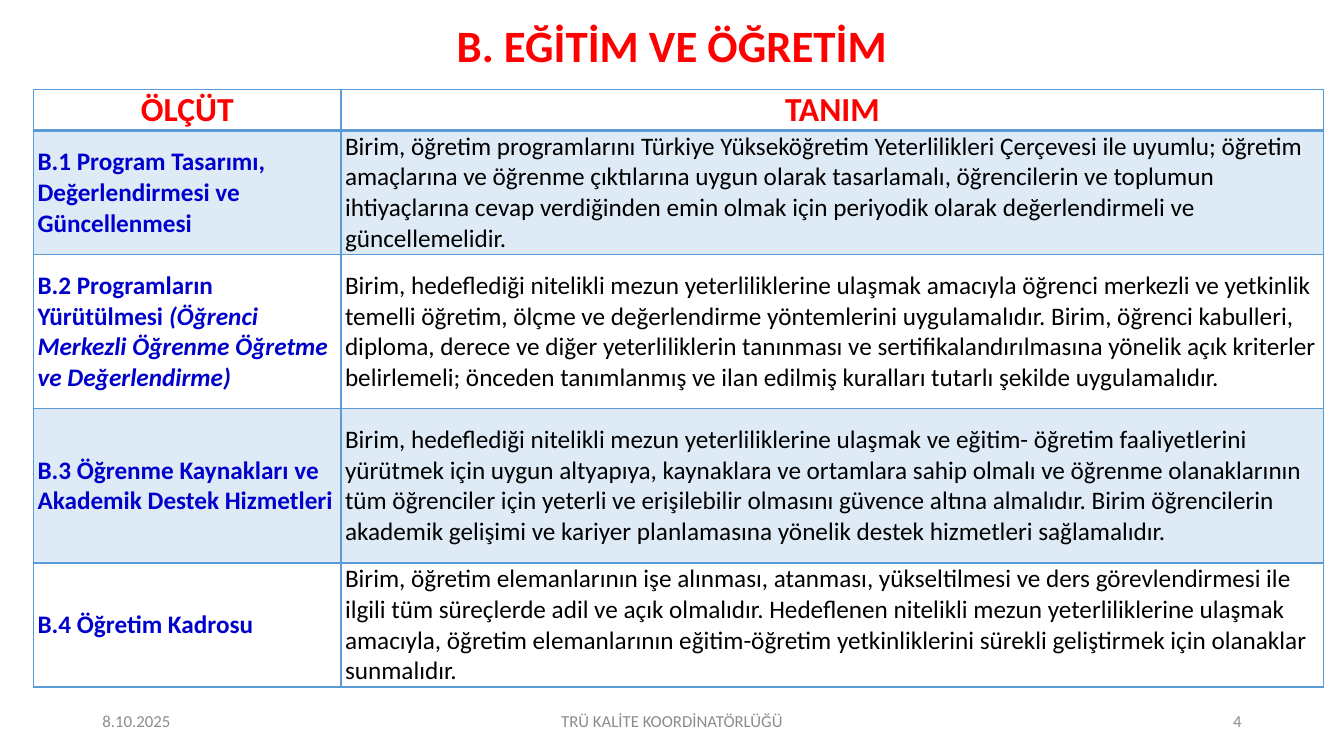
from lxml import etree
from pptx import Presentation
from pptx import util as u
from pptx.dml import color
from pptx.enum import text
from pptx.oxml import ns

COLORS = {"heading": "FF0000", "criterion": "0000CC", "body": "000000",
          "accent": "5B9BD5", "footer": "8C8C8C"}
LEFT, CENTER, RIGHT = text.PP_ALIGN.LEFT, text.PP_ALIGN.CENTER, text.PP_ALIGN.RIGHT

CRITERIA = [
    (["B.1 Program Tasarımı, Değerlendirmesi ve Güncellenmesi"],
     "Birim, öğretim programlarını Türkiye Yükseköğretim Yeterlilikleri Çerçevesi ile uyumlu; "
     "öğretim amaçlarına ve öğrenme çıktılarına uygun olarak tasarlamalı, öğrencilerin ve toplumun "
     "ihtiyaçlarına cevap verdiğinden emin olmak için periyodik olarak değerlendirmeli ve "
     "güncellemelidir."),
    (["B.2 Programların Yürütülmesi ", "(Öğrenci Merkezli Öğrenme Öğretme ve Değerlendirme)"],
     "Birim, hedeflediği nitelikli mezun yeterliliklerine ulaşmak amacıyla öğrenci merkezli ve "
     "yetkinlik temelli öğretim, ölçme ve değerlendirme yöntemlerini uygulamalıdır. Birim, öğrenci "
     "kabulleri, diploma, derece ve diğer yeterliliklerin tanınması ve sertifikalandırılmasına "
     "yönelik açık kriterler belirlemeli; önceden tanımlanmış ve ilan edilmiş kuralları tutarlı "
     "şekilde uygulamalıdır."),
    (["B.3 Öğrenme Kaynakları ve Akademik Destek Hizmetleri"],
     "Birim, hedeflediği nitelikli mezun yeterliliklerine ulaşmak ve eğitim- öğretim faaliyetlerini "
     "yürütmek için uygun altyapıya, kaynaklara ve ortamlara sahip olmalı ve öğrenme olanaklarının "
     "tüm öğrenciler için yeterli ve erişilebilir olmasını güvence altına almalıdır. Birim "
     "öğrencilerin akademik gelişimi ve kariyer planlamasına yönelik destek hizmetleri sağlamalıdır."),
    (["B.4 Öğretim Kadrosu"],
     "Birim, öğretim elemanlarının işe alınması, atanması, yükseltilmesi ve ders görevlendirmesi ile "
     "ilgili tüm süreçlerde adil ve açık olmalıdır. Hedeflenen nitelikli mezun yeterliliklerine "
     "ulaşmak amacıyla, öğretim elemanlarının eğitim-öğretim yetkinliklerini sürekli geliştirmek "
     "için olanaklar sunmalıdır."),
]


class PageBuilder:
    font = "Calibri"
    columns, rows = 40, 50

    def __init__(self, deck):
        self.page = deck.slides.add_slide(deck.slide_layouts[5])
        self.column = deck.slide_width / self.columns
        self.row = deck.slide_height / self.rows

    def across(self, count):
        return u.Emu(round(count * self.column))

    def down(self, count):
        return u.Emu(round(count * self.row))

    def frame(self, left, top, width, height):
        return self.across(left), self.down(top), self.across(width), self.down(height)

    def fill_para(self, para, spans, size, shade, align=LEFT, bold=False):
        para.alignment = align
        for index, words in enumerate(spans):
            span = para.add_run()
            span.text = words
            if index:
                span.font.italic = True
        para.font.name = self.font
        para.font.size = u.Pt(size)
        para.font.bold = bold
        para.font.color.rgb = color.RGBColor.from_string(COLORS[shade])

    def title(self, words, *place):
        box = self.page.shapes.title
        box.left, box.top, box.width, box.height = self.frame(*place)
        box.text_frame.vertical_anchor = text.MSO_ANCHOR.MIDDLE
        para = box.text_frame.paragraphs[0]
        para.line_spacing = 0.9
        self.fill_para(para, [words], 32, "heading", CENTER, True)

    def label(self, words, align, *place):
        box = self.page.shapes.add_textbox(*self.frame(*place))
        box.text_frame.word_wrap = True
        box.text_frame.vertical_anchor = text.MSO_ANCHOR.MIDDLE
        self.fill_para(box.text_frame.paragraphs[0], [words], 12, "footer", align)

    def border(self, cell, index, side, points):
        line = etree.Element(ns.qn(f"a:ln{side}"), w=str(u.Pt(points)))
        fill = etree.SubElement(line, ns.qn("a:solidFill"))
        etree.SubElement(fill, ns.qn("a:srgbClr"), val=COLORS["accent"])
        cell._tc.get_or_add_tcPr().insert(index, line)

    def cell(self, cell, spans, tinted, widths, **style):
        cell.margin_left = cell.margin_right = u.Inches(0.04)
        cell.margin_top = cell.margin_bottom = 0
        cell.vertical_anchor = text.MSO_ANCHOR.MIDDLE
        if tinted:
            cell.fill.solid()
            cell.fill.fore_color.rgb = color.RGBColor.from_string(COLORS["accent"])
            tint = cell._tc.tcPr.find(".//" + ns.qn("a:srgbClr"))
            etree.SubElement(tint, ns.qn("a:alpha"), val="20000")
        else:
            cell.fill.background()
        for index, (side, points) in enumerate(zip("LRTB", widths)):
            self.border(cell, index, side, points)
        para = cell.text_frame.paragraphs[0]
        para.space_after = u.Pt(4)
        self.fill_para(para, spans, **style)

    def table(self, left, top, widths, heights, headings, criteria):
        place = self.frame(left, top, sum(widths), sum(heights))
        table = self.page.shapes.add_table(len(heights), len(widths), *place).table
        table.first_row = table.horz_banding = False
        for column, width in zip(table.columns, widths):
            column.width = self.across(width)
        for row, height in zip(table.rows, heights):
            row.height = self.down(height)
        for index, heading in enumerate(headings):
            self.cell(table.cell(0, index), [heading], False, (1, 1, 1, 2),
                      size=24, shade="heading", align=CENTER, bold=True)
        for index, (criterion, definition) in enumerate(criteria, 1):
            tinted = index % 2 == 1
            edges = (1, 1, 2 if index == 1 else 1, 1)
            self.cell(table.cell(index, 0), criterion, tinted, edges,
                      size=18, shade="criterion", bold=True)
            self.cell(table.cell(index, 1), [definition], tinted, edges,
                      size=18, shade="body")


def main():
    deck = Presentation()
    deck.slide_width, deck.slide_height = u.Inches(13.33), u.Inches(7.5)
    builder = PageBuilder(deck)
    builder.title("B. EĞİTİM VE ÖĞRETİM", 0, 1, 40, 4.4)
    builder.table(1, 5.93, (9.15, 29.25), (2.6, 8.2, 10.2, 10.2, 8.2),
                  ("ÖLÇÜT", "TANIM"), CRITERIA)
    for words, align, left, width in (
        ("8.10.2025", LEFT, 2.75, 9),
        ("TRÜ KALİTE KOORDİNATÖRLÜĞÜ", CENTER, 13.25, 13.5),
        ("4", RIGHT, 28.25, 9),
    ):
        builder.label(words, align, left, 46.33, width, 2.67)
    deck.save("out.pptx")


if __name__ == "__main__":
    main()
